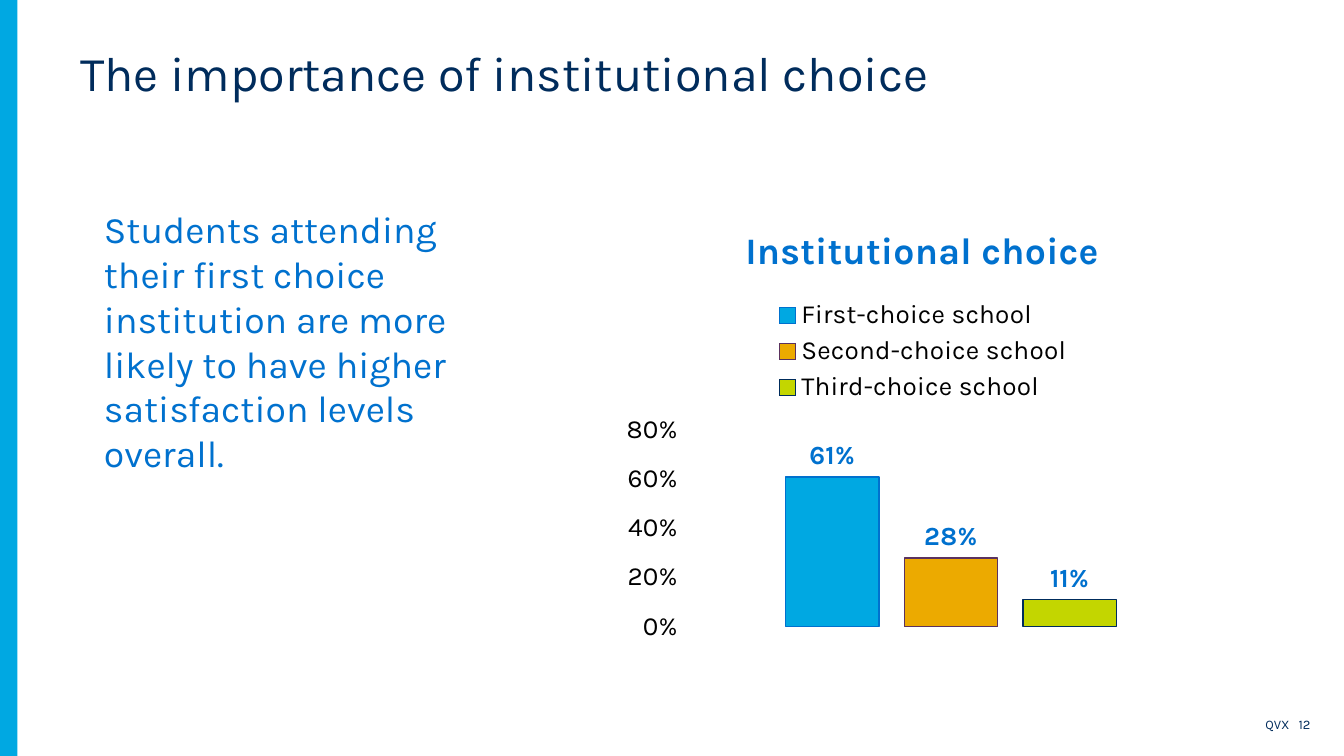
import pptx
import pptx.chart.data
import pptx.dml.color
import pptx.enum.chart
import pptx.enum.shapes
import pptx.enum.text
import pptx.oxml
import pptx.oxml.ns
import pptx.util

WIDTH = 10
HEIGHT = WIDTH * 9 / 16
FONT = "Karla"
COLORS = {
    "navy": "002C5C", "blue": "0071CE", "sky": "00A8E2", "amber": "ECAA00",
    "lime": "C3D600", "plum": "5B325F", "black": "000000",
}
SCHOOLS = [  # name, share, fill, outline
    ("First-choice school", 0.61, "sky", "blue"),
    ("Second-choice school", 0.28, "amber", "plum"),
    ("Third-choice school", 0.11, "lime", "navy"),
]
# Regions as percentages of the page: left, top, width, height
REGIONS = {
    "stripe": (0, 0, 1.3, 100),
    "title": (5, 6.05, 86.6, 8),
    "message": (6.75, 26.4, 32.4, 31.7),
    "chart": (45.8, 26.5, 45.8, 59.7),
    "footer": (93.1, 93.9, 5.4, 3.9),
}


def rgb(name):
    return pptx.dml.color.RGBColor.from_string(COLORS[name])


def box_of(region):
    left, top, width, height = (percent / 100 for percent in REGIONS[region])
    return [pptx.util.Inches(length) for length in
            (left * WIDTH, top * HEIGHT, width * WIDTH, height * HEIGHT)]


def style_font(font, size, color, bold=False):
    font.name = FONT
    font.size = pptx.util.Pt(size)
    font.bold = bold
    font.color.rgb = rgb(color)


def add_text(page, box, text, size, color, align="LEFT", anchor="TOP", spacing=None, wrap=True):
    frame = page.shapes.add_textbox(*box).text_frame
    frame.word_wrap = wrap
    frame.vertical_anchor = getattr(pptx.enum.text.MSO_ANCHOR, anchor)
    para = frame.paragraphs[0]
    para.alignment = getattr(pptx.enum.text.PP_ALIGN, align)
    para.line_spacing = spacing
    span = para.add_run()
    span.text = text
    style_font(span.font, size, color)


def add_stripe(page, box):
    stripe = page.shapes.add_shape(pptx.enum.shapes.MSO_SHAPE.RECTANGLE, *box)
    stripe.shadow.inherit = False
    stripe.fill.solid()
    stripe.fill.fore_color.rgb = rgb("sky")
    stripe.line.fill.background()


def place_part(part, inner=False, **shares):
    """Fix a chart part at shares (x, y, w, h) of the chart's box."""
    target = '<c:layoutTarget val="inner"/>' if inner else ""
    modes = "".join(f'<c:{key}Mode val="edge"/>' for key in shares if key in "xy")
    values = "".join(f'<c:{key} val="{share}"/>' for key, share in shares.items())
    layout = pptx.oxml.parse_xml(
        f'<c:layout {pptx.oxml.ns.nsdecls("c")}><c:manualLayout>'
        f"{target}{modes}{values}</c:manualLayout></c:layout>")
    for old in part.findall(pptx.oxml.ns.qn("c:layout")):
        part.remove(old)
    before = [pptx.oxml.ns.qn(tag) for tag in ("c:tx", "c:legendPos")]
    part.insert(sum(child.tag in before for child in part), layout)


def style_series(series, fill, outline):
    series.format.fill.solid()
    series.format.fill.fore_color.rgb = rgb(fill)
    series.format.line.color.rgb = rgb(outline)
    series.format.line.width = pptx.util.Pt(0.75)
    labels = series.data_labels
    labels.show_value = True
    labels.number_format = "0%"
    labels.number_format_is_linked = False
    labels.position = pptx.enum.chart.XL_LABEL_POSITION.OUTSIDE_END
    style_font(labels.font, 14, "blue", bold=True)


def style_axes(chart):
    chart.category_axis.visible = False
    axis = chart.value_axis
    axis.minimum_scale, axis.maximum_scale, axis.major_unit = 0, 0.8, 0.2
    axis.has_major_gridlines = False
    axis.major_tick_mark = pptx.enum.chart.XL_TICK_MARK.NONE
    axis.format.line.fill.background()
    axis.tick_labels.number_format = "0%"
    axis.tick_labels.number_format_is_linked = False
    style_font(axis.tick_labels.font, 14, "black")


def add_choice_chart(page, box):
    data = pptx.chart.data.CategoryChartData(number_format="0%")
    data.categories = ["1"]
    for name, share, *_ in SCHOOLS:
        data.add_series(name, [share])
    kind = pptx.enum.chart.XL_CHART_TYPE.COLUMN_CLUSTERED
    chart = page.shapes.add_chart(kind, *box, data).chart
    style_font(chart.font, 10, "black")

    title = chart.chart_title
    title.text_frame.text = "Institutional choice"
    style_font(title.text_frame.paragraphs[0].runs[0].font, 20, "blue", bold=True)
    title.include_in_layout = False

    chart.has_legend = True
    chart.legend.position = pptx.enum.chart.XL_LEGEND_POSITION.TOP
    chart.legend.include_in_layout = False
    style_font(chart.legend.font, 14, "black")

    plot = chart.plots[0]
    plot.gap_width, plot.overlap, plot.vary_by_categories = 219, -27, False
    for series, (_, _, fill, outline) in zip(plot.series, SCHOOLS):
        style_series(series, fill, outline)
    style_axes(chart)

    root = chart.element.chart
    place_part(root.find(pptx.oxml.ns.qn("c:title")), x=0.2, y=0.04)
    place_part(root.find(pptx.oxml.ns.qn("c:legend")), x=0.26, y=0.21, w=0.48, h=0.25)
    place_part(root.plotArea, inner=True, x=0.11, y=0.51, w=0.87, h=0.435)


def main():
    deck = pptx.Presentation()
    deck.slide_width = pptx.util.Inches(WIDTH)
    deck.slide_height = pptx.util.Inches(HEIGHT)
    page = deck.slides.add_slide(deck.slide_layouts[6])
    add_text(page, box_of("footer"), "QVX   12", 7, "navy", align="RIGHT", wrap=False)
    add_stripe(page, box_of("stripe"))
    add_text(page, box_of("title"), "The importance of institutional choice",
             26, "navy", anchor="MIDDLE", spacing=0.9)
    add_choice_chart(page, box_of("chart"))
    add_text(page, box_of("message"),
             "Students attending their first choice institution are more likely "
             "to have higher satisfaction levels overall.", 20, "blue")
    deck.save("out.pptx")


if __name__ == "__main__":
    main()
